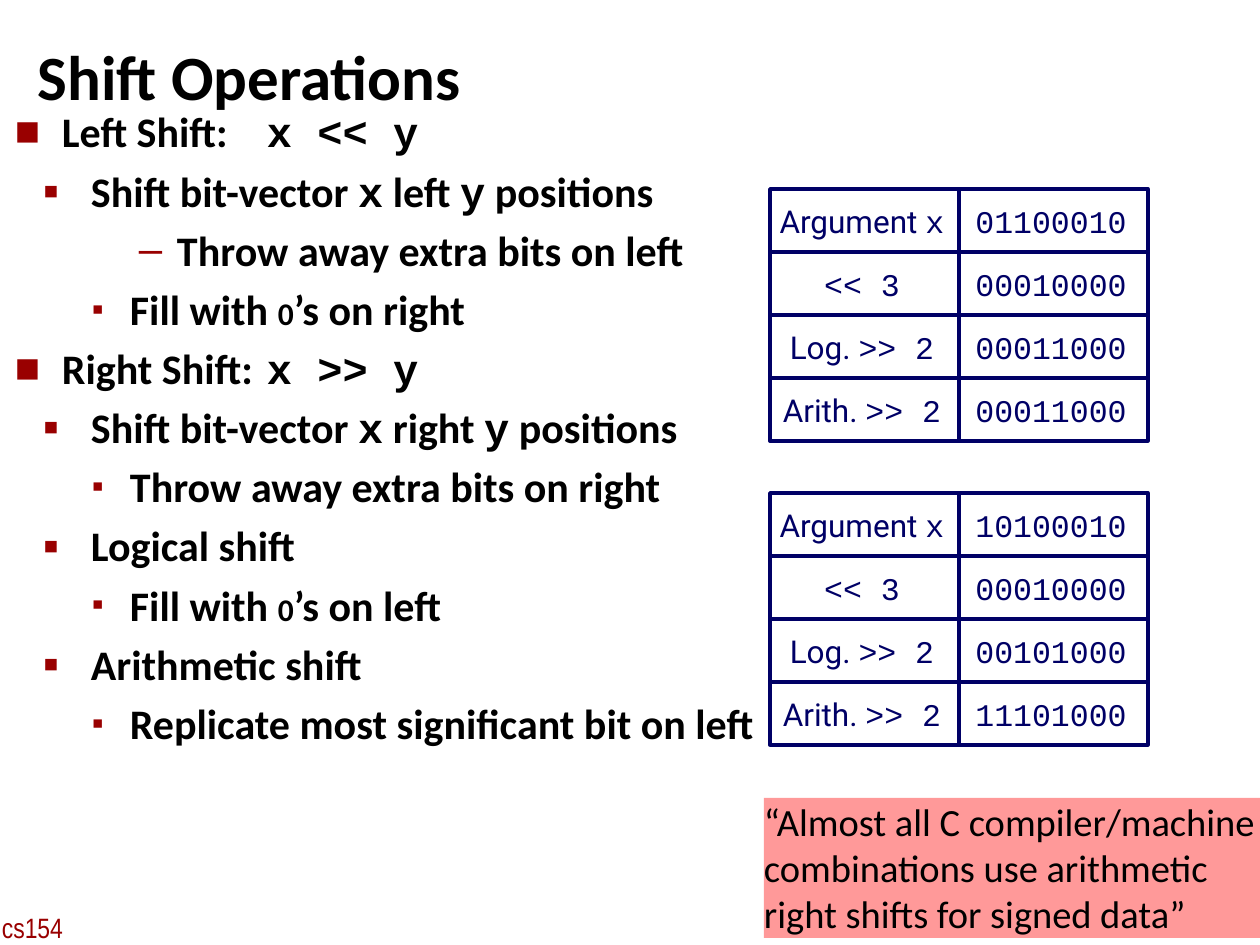
from lxml import etree
from pptx import Presentation
from pptx import util as u
from pptx.dml.color import RGBColor
from pptx.enum import shapes, text
from pptx.oxml.ns import qn

PX = 914400 / 126
BLACK, RED, NAVY, PINK, WHITE = "000000", "990000", "000066", "FF9999", "FFFFFF"
SANS, MONO, LABEL, NARROW = "Calibri", "Courier New", "Roboto", "Arial Narrow"
BULLET_FONT = "Arial"

# Content: a run is (text, font) or (text, font, size)
TITLE = "Shift Operations"
FOOTER = "cs154"
NOTE = ("“Almost all C compiler/machine combinations use arithmetic "
        "right shifts for signed data”")


def positions(direction):
    return [("Shift bit-vector ", SANS), ("x", MONO), (f" {direction} ", SANS),
            ("y", MONO), (" positions", SANS)]


def fill_with_zeros(side):
    return [("Fill with ", SANS), ("0", SANS, 18), (f"’s on {side}", SANS)]


OUTLINE = [
    (0, [("Left Shift: \t", SANS), ("x << y", MONO)]),
    (1, positions("left")),
    (3, [("Throw away extra bits on left", SANS)]),
    (2, fill_with_zeros("right")),
    (0, [("Right Shift: \t", SANS), ("x >> y", MONO)]),
    (1, positions("right")),
    (2, [("Throw away extra bits on right", SANS)]),
    (1, [("Logical shift", SANS)]),
    (2, fill_with_zeros("left")),
    (1, [("Arithmetic shift", SANS)]),
    (2, [("Replicate most significant bit on left", SANS)]),
]
# level: (left margin px, hanging px, bullet, bullet size %)
LEVELS = {
    0: (47, 47, "■", 100),
    1: (76, 48, "▪", 110),
    2: (115, 38, "▪", 80),
    3: (162, 38, "–", 100),
}
ROW_LABELS = [
    [("Argument ", LABEL), ("x", MONO)],
    [("<< 3", MONO)],
    [("Log. ", LABEL), (">> 2", MONO)],
    [("Arith. ", LABEL), (">> 2", MONO)],
]
GRIDS = [  # top px, bit patterns
    (189, ["01100010", "00010000", "00011000", "00011000"]),
    (493, ["10100010", "00010000", "00101000", "11101000"]),
]
GRID_LEFT, CELL_WIDTH, CELL_HEIGHT = 770, 189, 63


def px(value):
    return u.Emu(round(value * PX))


def box(*place):
    return [px(value) for value in place]


def color(value):
    return RGBColor.from_string(value)


def format_frame(shape, margins, **values):
    frame = shape.text_frame
    sides = ("margin_left", "margin_top", "margin_right", "margin_bottom")
    settings = dict(zip(sides, box(*margins)), word_wrap=True,
                    auto_size=text.MSO_AUTO_SIZE.NONE) | values
    for name, value in settings.items():
        setattr(frame, name, value)
    return frame


def write(paragraph, runs, size, ink, bold=False, align=text.PP_ALIGN.LEFT):
    paragraph.alignment = align
    for words, font, *own_size in runs:
        run = paragraph.add_run()
        run.text = words
        values = dict(name=font, size=u.Pt(own_size[0] if own_size else size), bold=bold)
        for name, value in values.items():
            setattr(run.font, name, value)
        run.font.color.rgb = color(ink)


def add_bullet(paragraph, level):
    margin, hanging, character, percent = LEVELS[level]
    paragraph.level = level
    properties = paragraph._p.get_or_add_pPr()
    properties.set("marL", str(px(margin)))
    properties.set("indent", str(-px(hanging)))
    bullet_color = etree.SubElement(properties, qn("a:buClr"))
    etree.SubElement(bullet_color, qn("a:srgbClr"), val=RED)
    etree.SubElement(properties, qn("a:buSzPct"), val=str(percent * 1000))
    etree.SubElement(properties, qn("a:buFont"), typeface=BULLET_FONT)
    etree.SubElement(properties, qn("a:buChar"), char=character)


def add_rectangle(slide, place, fill, line=None):
    shape = slide.shapes.add_shape(shapes.MSO_SHAPE.RECTANGLE, *box(*place))
    shape.shadow.inherit = False
    shape.fill.solid()
    shape.fill.fore_color.rgb = color(fill)
    if line:
        shape.line.color.rgb = color(line)
        shape.line.width = u.Pt(2)
    else:
        shape.line.fill.background()
    return shape


def add_cell(slide, column, top, runs):
    place = (GRID_LEFT + column * CELL_WIDTH, top, CELL_WIDTH, CELL_HEIGHT)
    cell = add_rectangle(slide, place, WHITE, NAVY)
    frame = format_frame(cell, (8, 8, 13, 8), word_wrap=False,
                         vertical_anchor=text.MSO_ANCHOR.MIDDLE)
    write(frame.paragraphs[0], runs, 18, NAVY, align=text.PP_ALIGN.CENTER)


def main():
    presentation = Presentation()
    presentation.slide_width, presentation.slide_height = box(1260, 945)
    slide = presentation.slides.add_slide(presentation.slide_layouts[5])

    # Footer
    footer = slide.shapes.add_textbox(*box(-4, 905, 77, 47))
    frame = format_frame(footer, (6, 6, 6, 6), word_wrap=False)
    write(frame.paragraphs[0], [(FOOTER, NARROW)], 16, RED)

    # Title
    title = slide.shapes.title
    title.left, title.top, title.width, title.height = box(32, 0, 1046, 150)
    frame = format_frame(title, (6, 6, 6, 6), vertical_anchor=text.MSO_ANCHOR.MIDDLE)
    write(frame.paragraphs[0], [(TITLE, SANS)], 36, BLACK, bold=True)

    # Outline
    outline = slide.shapes.add_textbox(*box(9, 100, 1089, 757))
    frame = format_frame(outline, (6, 6, 6, 6))
    for index, (level, runs) in enumerate(OUTLINE):
        paragraph = frame.add_paragraph() if index else frame.paragraphs[0]
        add_bullet(paragraph, level)
        if index:
            paragraph.space_before = u.Pt(5)
        write(paragraph, runs, 24, BLACK, bold=True)

    # Worked examples
    for grid_top, patterns in GRIDS:
        for row, (label, bits) in enumerate(zip(ROW_LABELS, patterns)):
            top = grid_top + row * CELL_HEIGHT
            add_cell(slide, 0, top, label)
            add_cell(slide, 1, top, [(bits, MONO)])

    # Note
    note = add_rectangle(slide, (764, 798, 498, 140), PINK)
    frame = format_frame(note, (0, 0, 0, 0), vertical_anchor=text.MSO_ANCHOR.TOP)
    write(frame.paragraphs[0], [(NOTE, SANS)], 22, BLACK)

    presentation.save("out.pptx")


if __name__ == "__main__":
    main()
